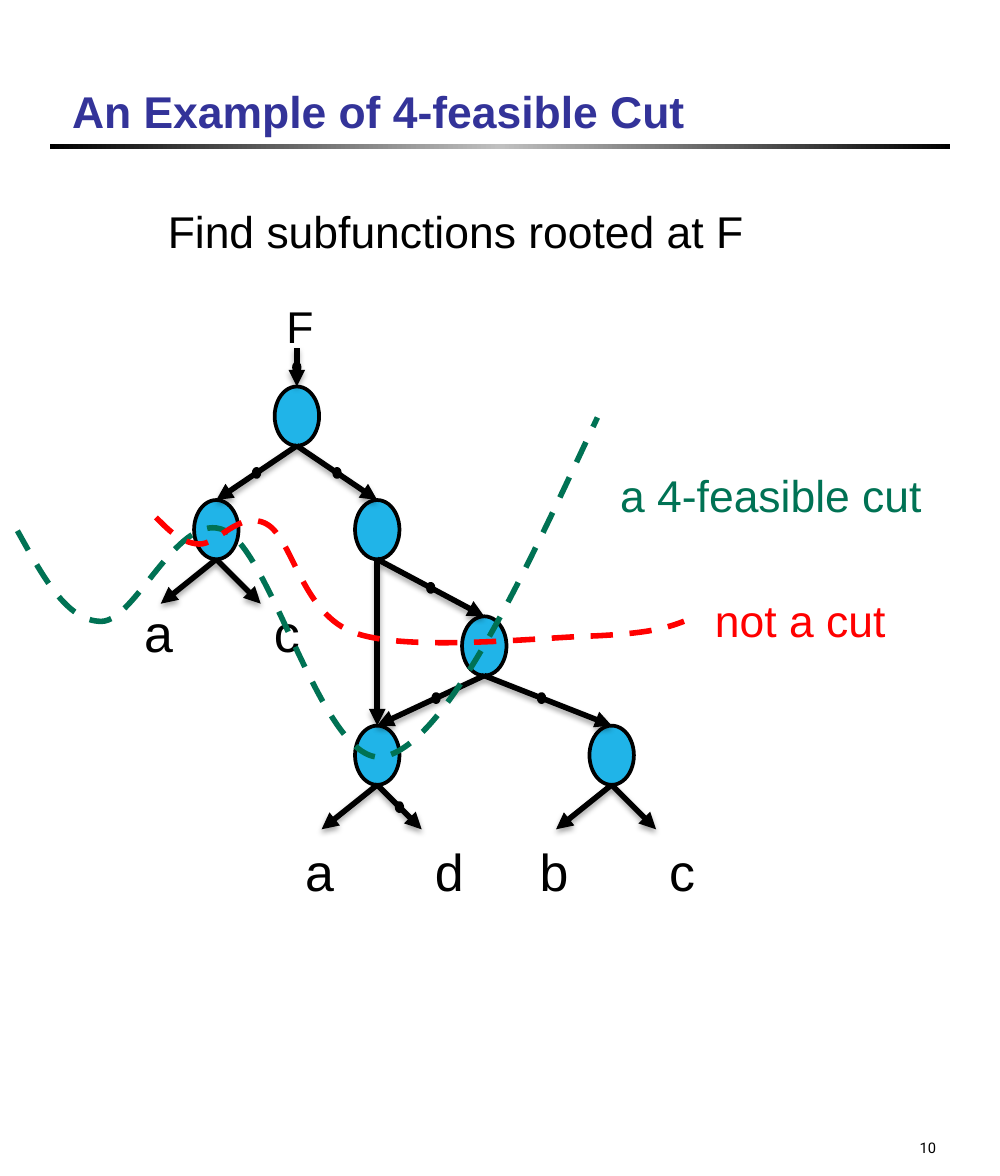
from copy import deepcopy
from dataclasses import dataclass

from lxml import etree
from pptx import Presentation
from pptx import util as u
from pptx.dml import color
from pptx.enum import dml, shapes, text
from pptx.oxml import ns, parse_xml

Pt = u.Pt


@dataclass(frozen=True)
class Theme:
    ink: str = "000000"
    title: str = "333399"
    silver: str = "C0C0C0"
    node: str = "20B4E8"
    cut: str = "007254"
    no_cut: str = "FF0000"
    font: str = "Arial"
    number_font: str = "Roboto"
    text_size: float = 24
    leaf_size: float = 28
    number_size: float = 7.9
    outline: float = 2
    stroke: float = 3


THEME = Theme()
SHADOW = (
    f'<a:effectLst {ns.nsdecls("a")}><a:outerShdw blurRad="{Pt(3.1)}" dist="{Pt(1.8)}" '
    'dir="5400000" rotWithShape="0"><a:srgbClr val="000000"><a:alpha val="35000"/>'
    "</a:srgbClr></a:outerShdw></a:effectLst>"
)

# Node: centre x and top, inside the diagram box
NODE_W, NODE_H = 24, 32
NODES = {
    "root": (150.3, 58.7),
    "left": (106.8, 120),
    "middle": (193.7, 120),
    "right": (251.5, 182.8),
    "low left": (193.7, 241.8),
    "low right": (320.3, 241.8),
}
# Parent, child, and how far along the edge its dot sits
EDGES = [
    ("root", "left", 0.5),
    ("root", "middle", 0.5),
    ("middle", "right", 0.5),
    ("middle", "low left", None),
    ("right", "low left", 0.45),
    ("right", "low right", 0.45),
]
# Parent, left and right inputs, label drop below the arrow tips, dot on right edge
LEAVES = [
    ("left", "a", "c", -5, None),
    ("low left", "a", "d", 2, 0.5),
    ("low right", "b", "c", 2, None),
]
# Bézier chains: a start point, then two handles and an end point per segment
FEASIBLE_CUT = [
    (-0.6, 136.6), (13, 161), (26, 185.5), (44.7, 185.5),
    (63.4, 185.5), (86.5, 124.3), (111.7, 136.6),
    (137.6, 148.8), (165.7, 268.3), (198.8, 258.2),
    (232.6, 248.2), (272.2, 161.8), (312.6, 75.4),
]
NOT_A_CUT = [
    (74.2, 129.4), (80.7, 135.8), (87.2, 143), (97.3, 143.8),
    (107.4, 144.5), (119.6, 125), (134, 133),
    (148.4, 140.9), (152.7, 181.9), (182.2, 192),
    (211.8, 202.1), (281.6, 194.2), (311.1, 193.4),
    (340.6, 192), (350, 189.1), (359.4, 185.5),
]


def rgb(value):
    return color.RGBColor.from_string(value)


def write(frame, words, ink=THEME.ink, anchor=text.MSO_ANCHOR.TOP,
          align=text.PP_ALIGN.LEFT, wrap=False, **font):
    for key, value in {"word_wrap": wrap, "vertical_anchor": anchor,
                       "auto_size": text.MSO_AUTO_SIZE.NONE}.items():
        setattr(frame, key, value)
    line = frame.paragraphs[0]
    line.alignment = align
    run = line.add_run()
    run.text = words
    style = {"name": THEME.font, "size": THEME.text_size, "bold": False} | font
    style["size"] = Pt(style["size"])
    for key, value in style.items():
        setattr(run.font, key, value)
    run.font.color.rgb = rgb(ink)


def label(slide, box, words, **style):
    write(slide.shapes.add_textbox(*map(Pt, box)).text_frame, words, **style)


def oval(slide, x, y, width, height, fill):
    disc = slide.shapes.add_shape(shapes.MSO_SHAPE.OVAL, *map(Pt, (x, y, width, height)))
    disc.shadow.inherit = False
    disc.fill.solid()
    disc.fill.fore_color.rgb = rgb(fill)
    disc.line.color.rgb = rgb(THEME.ink)
    disc.line.width = Pt(THEME.outline)


def arrow(slide, start, end):
    edge = slide.shapes.add_connector(shapes.MSO_CONNECTOR.STRAIGHT, *map(Pt, start + end))
    edge.line.color.rgb = rgb(THEME.ink)
    edge.line.width = Pt(THEME.stroke)
    etree.SubElement(edge.line._get_or_add_ln(), ns.qn("a:tailEnd"), type="triangle")
    edge._element.spPr.append(parse_xml(SHADOW))


def dashed_curve(slide, origin, points, ink):
    places = [(Pt(origin[0] + x), Pt(origin[1] + y)) for x, y in points]
    builder = slide.shapes.build_freeform(*places[0])
    builder.add_line_segments(places[1:], close=False)
    curve = builder.convert_to_shape()
    # Turn each three straight steps into one cubic segment
    steps = list(curve._element.iter(ns.qn("a:lnTo")))
    for first in range(0, len(steps), 3):
        cubic = etree.Element(ns.qn("a:cubicBezTo"))
        steps[first].addprevious(cubic)
        for step in steps[first:first + 3]:
            cubic.append(step[0])
            step.getparent().remove(step)
    curve.shadow.inherit = False
    curve.fill.background()
    curve.line.color.rgb = rgb(ink)
    curve.line.width = Pt(THEME.stroke)
    curve.line.dash_style = dml.MSO_LINE.DASH


def title_region(slide, box):
    left, top, width, height = box
    # Gradient rule under the title
    rule = slide.shapes.add_shape(
        shapes.MSO_SHAPE.RECTANGLE, *map(Pt, (left, top + height, width, 2.9)))
    rule.shadow.inherit = False
    rule.line.fill.background()
    rule.fill.gradient()
    rule.fill.gradient_angle = 0
    stop_list = next(rule._element.iter(ns.qn("a:gsLst")))
    stop_list.insert(1, deepcopy(stop_list[0]))
    ramp = [(0, THEME.ink), (0.5, THEME.silver), (1, THEME.ink)]
    for stop, (position, ink) in zip(rule.fill.gradient_stops, ramp):
        stop.position = position
        stop.color.rgb = rgb(ink)
    # Title
    title = slide.shapes.title
    place = {"left": left + 4.7, "top": top, "width": width - 13.7, "height": height}
    for key, value in place.items():
        setattr(title, key, Pt(value))
    write(title.text_frame, "An Example of 4-feasible Cut", ink=THEME.title,
          anchor=text.MSO_ANCHOR.BOTTOM, wrap=True, bold=True)


def diagram_region(slide, box):
    left, top = box[:2]
    ports = {name: ((left + x, top + y), (left + x, top + y + NODE_H))
             for name, (x, y) in NODES.items()}
    # Nodes
    for (x, y), _ in ports.values():
        oval(slide, x - NODE_W / 2, y, NODE_W, NODE_H, THEME.node)
    # Edges: output, between nodes, and to the inputs
    root_x, root_y = ports["root"][0]
    edges = [((root_x, root_y - 20.7), (root_x, root_y), 0.5)]
    edges += [(ports[parent][1], ports[child][0], dot) for parent, child, dot in EDGES]
    for parent, first, second, drop, dot in LEAVES:
        x, y = ports[parent][1]
        tip_y = y + 24
        edges += [((x, y), (x - 30, tip_y), None), ((x, y), (x + 24, tip_y), dot)]
        for name, label_x in ((first, x - 46), (second, x + 24)):
            label(slide, (label_x, tip_y + drop, 30, 40), name, size=THEME.leaf_size)
    for start, end, _ in edges:
        arrow(slide, start, end)
    # Cut lines and their names
    for points, ink, words, x, y, width in (
            (FEASIBLE_CUT, THEME.cut, "a 4-feasible cut", 317.8, 99.1, 179),
            (NOT_A_CUT, THEME.no_cut, "not a cut", 369, 166.8, 120)):
        dashed_curve(slide, (left, top), points, ink)
        label(slide, (left + x, top + y, width, 36), words, ink=ink)
    # Dots on the edges
    for start, end, dot in edges:
        if dot:
            x, y = (a + (b - a) * dot for a, b in zip(start, end))
            oval(slide, x - 1.5, y - 2.2, 3, 4.4, THEME.ink)
    label(slide, (root_x - 12.7, root_y - 51, 29, 36), "F")


def main():
    deck = Presentation()
    deck.slide_width, deck.slide_height = Pt(540), Pt(635)
    slide = deck.slides.add_slide(deck.slide_layouts[5])
    title_region(slide, (27, 14.4, 486, 63.4))
    label(slide, (400, 585.4, 112.6, 42.5), "10", name=THEME.number_font,
          size=THEME.number_size, anchor=text.MSO_ANCHOR.BOTTOM,
          align=text.PP_ALIGN.RIGHT, wrap=True)
    diagram_region(slide, (10, 150, 500, 340))
    label(slide, (83.5, 106.6, 328.5, 36), "Find subfunctions rooted at F")
    deck.save("out.pptx")


if __name__ == "__main__":
    main()
